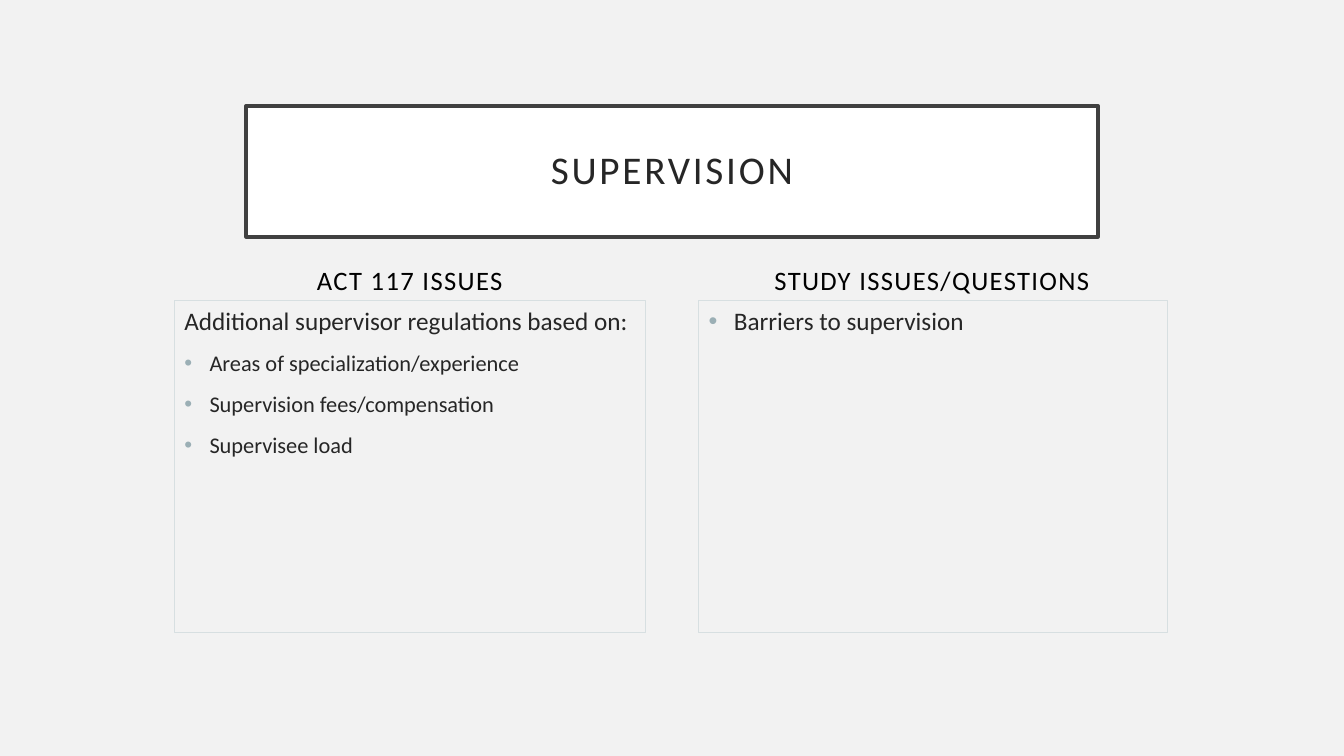
from dataclasses import dataclass

from lxml import etree
from pptx import Presentation
from pptx import util as u
from pptx.dml.color import RGBColor
from pptx.enum import shapes, text
from pptx.oxml.ns import qn


@dataclass(frozen=True)
class Theme:
    font: str = "Calibri"
    background: str = "F2F2F2"
    title_fill: str = "FFFFFF"
    title_border: str = "404040"
    panel_border: str = "D7DFE1"
    bullet: str = "9BAFB5"
    heading: str = "000000"
    body: str = "262626"
    title_size: float = 28
    heading_size: float = 19
    lead_size: float = 18
    item_size: float = 16


def write_text(paragraph, words, *, theme, size, color, align=text.PP_ALIGN.LEFT,
               before=10, line_spacing=None, tracking=0, bullet=False):
    """Fill one paragraph with formatted text."""
    paragraph.alignment = align
    paragraph.space_before = u.Pt(before)
    if line_spacing:
        paragraph.line_spacing = line_spacing
    run = paragraph.add_run()
    run.text = words
    run.font.name = theme.font
    run.font.size = u.Pt(size)
    run.font.color.rgb = RGBColor.from_string(color)
    if tracking:
        run.font._element.set("spc", str(tracking * 100))
    if bullet:
        props = paragraph._p.get_or_add_pPr()
        props.set("marL", str(u.Inches(0.25)))
        props.set("indent", str(-u.Inches(0.25)))
        bullet_color = etree.SubElement(props, qn("a:buClr"))
        etree.SubElement(bullet_color, qn("a:srgbClr"), val=theme.bullet)
        etree.SubElement(props, qn("a:buFont"), typeface="Arial")
        etree.SubElement(props, qn("a:buChar"), char="•")


class SlideBuilder:
    def __init__(self, slide, theme):
        self.slide = slide
        self.theme = theme
        fill = slide.background.fill
        fill.solid()
        fill.fore_color.rgb = RGBColor.from_string(theme.background)

    def box(self, left, top, width, height, *, border, weight, fill=None):
        """Add a bordered rectangle and return its text frame."""
        rect = self.slide.shapes.add_shape(
            shapes.MSO_SHAPE.RECTANGLE, *map(u.Inches, (left, top, width, height)))
        rect.shadow.inherit = False
        if fill:
            rect.fill.solid()
            rect.fill.fore_color.rgb = RGBColor.from_string(fill)
        else:
            rect.fill.background()
        rect.line.color.rgb = RGBColor.from_string(border)
        rect.line.width = u.Pt(weight)
        rect.text_frame.word_wrap = True
        return rect.text_frame

    def title(self, words, left, top, width, height):
        theme = self.theme
        frame = self.box(left, top, width, height, border=theme.title_border,
                         weight=2.5, fill=theme.title_fill)
        frame.vertical_anchor = text.MSO_ANCHOR.MIDDLE
        frame.margin_left = frame.margin_right = u.Inches(0.2)
        frame.margin_top = frame.margin_bottom = u.Inches(0.2)
        write_text(frame.paragraphs[0], words, theme=theme, size=theme.title_size,
                   color=theme.body, align=text.PP_ALIGN.CENTER, before=0,
                   line_spacing=0.9, tracking=2)

    def heading(self, words, left, top, width, height):
        theme = self.theme
        frame = self.slide.shapes.add_textbox(
            *map(u.Inches, (left, top, width, height))).text_frame
        frame.word_wrap = True
        frame.vertical_anchor = text.MSO_ANCHOR.BOTTOM
        write_text(frame.paragraphs[0], words, theme=theme, size=theme.heading_size,
                   color=theme.heading, align=text.PP_ALIGN.CENTER, tracking=1)

    def panel(self, entries, left, top, width, height, fill=None):
        """Add a panel of (words, size, bullet) entries."""
        theme = self.theme
        frame = self.box(left, top, width, height, border=theme.panel_border,
                         weight=0.75, fill=fill)
        frame.vertical_anchor = text.MSO_ANCHOR.TOP
        for index, (words, size, bullet) in enumerate(entries):
            paragraph = frame.add_paragraph() if index else frame.paragraphs[0]
            write_text(paragraph, words, theme=theme, size=size,
                       color=theme.body, bullet=bullet)


def main():
    deck = Presentation()
    deck.slide_width, deck.slide_height = u.Inches(13.33), u.Inches(7.5)
    theme = Theme()
    builder = SlideBuilder(deck.slides.add_slide(deck.slide_layouts[6]), theme)

    # Title
    builder.title("SUPERVISION", 2.44, 1.05, 8.45, 1.3)

    # Column headings
    heading_top, heading_height, column_width = 2.53, 0.45, 4.67
    for words, left in (("ACT 117 ISSUES", 1.73), ("STUDY ISSUES/QUESTIONS", 6.91)):
        builder.heading(words, left, heading_top, column_width, heading_height)

    # Column panels
    panel_top, panel_height = heading_top + heading_height, 3.3
    act_topics = ("Areas of specialization/experience",
                  "Supervision fees/compensation", "Supervisee load")
    act_issues = [("Additional supervisor regulations based on:", theme.lead_size, False)]
    act_issues += [(topic, theme.item_size, True) for topic in act_topics]
    study_issues = [("Barriers to supervision", theme.lead_size, True)]
    builder.panel(act_issues, 1.73, panel_top, column_width, panel_height)
    builder.panel(study_issues, 6.93, panel_top, 4.65, panel_height,
                  fill=theme.background)

    deck.save("out.pptx")


if __name__ == "__main__":
    main()
